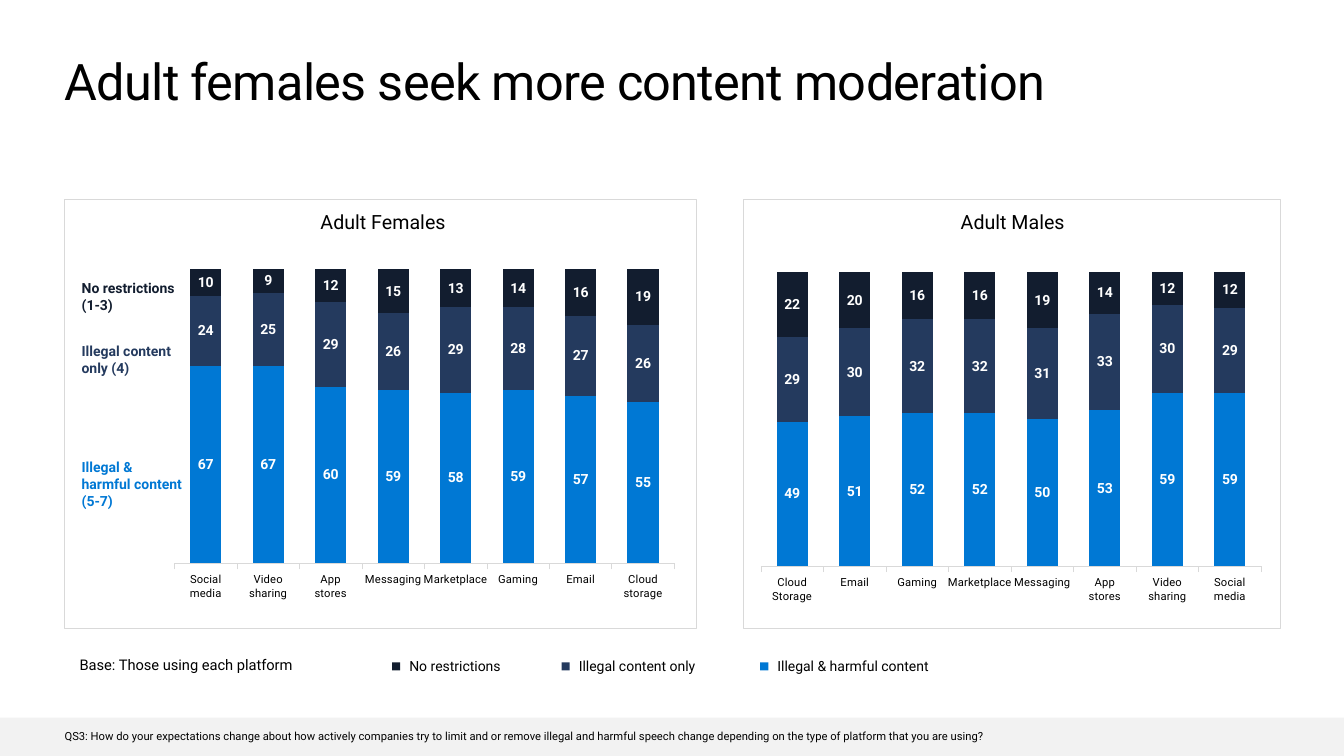
from dataclasses import dataclass

from lxml.etree import SubElement
from pptx import Presentation
from pptx.chart.data import CategoryChartData
from pptx.dml.color import RGBColor
from pptx.enum.chart import XL_CHART_TYPE, XL_TICK_LABEL_POSITION, XL_TICK_MARK
from pptx.enum.shapes import MSO_SHAPE
from pptx.enum.text import MSO_ANCHOR, PP_ALIGN
from pptx.oxml.ns import qn
from pptx.util import Inches, Pt

FONT = "Roboto"
BLACK, WHITE, BORDER, BAND = "000000", "FFFFFF", "D9D9D9", "F2F2F2"
BLUE, NAVY, DARK = "0078D4", "243A5E", "121D2F"


@dataclass(frozen=True)
class Box:
    left: float
    top: float
    width: float
    height: float

    def lengths(self) -> tuple:
        return tuple(Inches(v) for v in (self.left, self.top, self.width, self.height))


@dataclass(frozen=True)
class Label:
    text: str
    box: Box
    size: float
    color: str = BLACK
    bold: bool = False
    align: PP_ALIGN = PP_ALIGN.LEFT
    wrap: bool = True


@dataclass(frozen=True)
class Panel:
    heading: Label
    frame: Box
    chart: Box
    plot: Box  # fractions of the chart area
    categories: tuple
    harmful: tuple
    illegal: tuple
    unrestricted: tuple
    reverse: bool = False


@dataclass(frozen=True)
class LegendEntry:
    text: str
    color: str
    left: float
    width: float


PLATFORMS = ("Email", "Gaming", "Marketplace", "Messaging",
             "App\nstores", "Video\nsharing", "Social\nmedia")

PANELS = (
    Panel(
        Label("Adult Females", Box(2.62, 2.08, 2.36, 0.24), 14, align=PP_ALIGN.CENTER),
        Box(0.64, 1.98, 6.27, 4.26), Box(1.55, 2.03, 5.32, 4.14),
        Box(0.034, 0.155, 0.932, 0.705), ("Cloud\nstorage", *PLATFORMS),
        (55, 57, 59, 58, 59, 60, 67, 67),
        (26, 27, 28, 29, 26, 29, 25, 24),
        (19, 16, 14, 13, 15, 12, 9, 10), reverse=True),
    Panel(
        Label("Adult Males", Box(9.11, 2.08, 1.87, 0.24), 14, align=PP_ALIGN.CENTER),
        Box(7.37, 1.98, 5.33, 4.26), Box(7.35, 2.08, 5.34, 4.1),
        Box(0.037, 0.152, 0.929, 0.711), ("Cloud\nStorage", *PLATFORMS),
        (49, 51, 52, 52, 50, 53, 59, 59),
        (29, 30, 32, 32, 31, 33, 30, 29),
        (22, 20, 16, 16, 19, 14, 12, 12)),
)

LABELS = (
    Label("Illegal & harmful content (5-7)", Box(0.81, 4.55, 1.02, 0.5), 10, BLUE, True),
    Label("No restrictions\n(1-3)", Box(0.81, 2.77, 0.99, 0.34), 10, DARK, True),
    Label("Illegal content only (4)", Box(0.81, 3.4, 0.96, 0.34), 10, NAVY, True),
    Label("Base: Those using each platform", Box(0.79, 6.51, 2.69, 0.18), 10.5),
)

LEGEND = (
    LegendEntry("No restrictions", DARK, 3.89, 0.94),
    LegendEntry("Illegal content only", NAVY, 5.57, 1.18),
    LegendEntry("Illegal & harmful content", BLUE, 7.54, 1.59),
)

QUESTION = Label(
    "QS3: How do your expectations change about how actively companies try to limit "
    "and or remove illegal and harmful speech change depending on the type of platform "
    "that you are using?", Box(0.64, 7.24, 12.05, 0.13), 8)


def rgb(color: str) -> RGBColor:
    return RGBColor.from_string(color)


def style_font(font, size: float, color: str, bold: bool = False) -> None:
    font.name, font.size, font.bold = FONT, Pt(size), bold
    font.color.rgb = rgb(color)


def fill_text(shape, label: Label) -> None:
    frame = shape.text_frame
    frame.margin_left = frame.margin_right = frame.margin_top = frame.margin_bottom = 0
    frame.vertical_anchor = MSO_ANCHOR.TOP
    frame.word_wrap = label.wrap
    frame.text = label.text
    for paragraph in frame.paragraphs:
        paragraph.alignment = label.align
        for run in paragraph.runs:
            style_font(run.font, label.size, label.color, label.bold)


def add_label(slide, label: Label) -> None:
    fill_text(slide.shapes.add_textbox(*label.box.lengths()), label)


def add_rectangle(slide, box: Box, fill: str = "", line: str = "") -> None:
    shape = slide.shapes.add_shape(MSO_SHAPE.RECTANGLE, *box.lengths())
    shape.shadow.inherit = False
    if fill:
        shape.fill.solid()
        shape.fill.fore_color.rgb = rgb(fill)
    else:
        shape.fill.background()
    if line:
        shape.line.color.rgb = rgb(line)
        shape.line.width = Pt(0.75)
    else:
        shape.line.fill.background()


def place_plot(chart, plot: Box) -> None:
    area = chart.element.find(".//" + qn("c:plotArea"))
    for layout in area.findall(qn("c:layout")):
        area.remove(layout)
    layout = SubElement(area, qn("c:layout"))
    area.insert(0, layout)
    manual = SubElement(layout, qn("c:manualLayout"))
    settings = (("layoutTarget", "inner"), ("xMode", "edge"), ("yMode", "edge"),
                ("x", plot.left), ("y", plot.top), ("w", plot.width), ("h", plot.height))
    for name, value in settings:
        SubElement(manual, qn(f"c:{name}")).set("val", str(value))


def add_stacked_chart(slide, panel: Panel) -> None:
    data = CategoryChartData(number_format="0")
    data.categories = panel.categories
    data.add_series("Illegal & harmful content", panel.harmful)
    data.add_series("Illegal content only", panel.illegal)
    data.add_series("No restrictions", panel.unrestricted)
    chart = slide.shapes.add_chart(
        XL_CHART_TYPE.COLUMN_STACKED, *panel.chart.lengths(), data).chart
    chart.has_title = chart.has_legend = False
    style_font(chart.font, 10, WHITE)
    place_plot(chart, panel.plot)

    plot = chart.plots[0]
    plot.gap_width = plot.overlap = 100
    plot.vary_by_categories = False
    for series, color in zip(plot.series, (BLUE, NAVY, DARK)):
        series.format.fill.solid()
        series.format.fill.fore_color.rgb = rgb(color)
        labels = series.data_labels
        labels.show_value = True
        labels.number_format, labels.number_format_is_linked = "0", False
        style_font(labels.font, 10, WHITE, bold=True)

    category_axis, value_axis = chart.category_axis, chart.value_axis
    category_axis.major_tick_mark = XL_TICK_MARK.OUTSIDE
    category_axis.tick_label_position = XL_TICK_LABEL_POSITION.LOW
    category_axis.reverse_order = panel.reverse
    category_axis.format.line.color.rgb = rgb(BORDER)
    category_axis.format.line.width = Pt(0.5)
    style_font(category_axis.tick_labels.font, 8, BLACK)
    value_axis.minimum_scale, value_axis.maximum_scale = 0, 100
    value_axis.has_major_gridlines = False
    value_axis.visible = False


def main() -> None:
    presentation = Presentation()
    presentation.slide_width, presentation.slide_height = Inches(13.33), Inches(7.5)
    slide = presentation.slides.add_slide(presentation.slide_layouts[5])

    # Title
    title = slide.shapes.title
    title_label = Label("Adult females seek more content moderation",
                        Box(0.64, 0.5, 12.05, 0.61), 36)
    title.left, title.top, title.width, title.height = title_label.box.lengths()
    fill_text(title, title_label)
    title.text_frame.paragraphs[0].runs[0].font._element.set("spc", "-50")

    # Chart panels
    for panel in PANELS:
        add_rectangle(slide, panel.frame, line=BORDER)
        add_stacked_chart(slide, panel)
        add_label(slide, panel.heading)

    # Row labels and base
    for label in LABELS:
        add_label(slide, label)

    # Legend
    for entry in LEGEND:
        add_rectangle(slide, Box(entry.left, 6.57, 0.08, 0.08), fill=entry.color)
        text_box = Box(entry.left + 0.17, 6.52, entry.width, 0.17)
        add_label(slide, Label(entry.text, text_box, 10, wrap=False))

    # Footer
    add_rectangle(slide, Box(0, 7.12, 13.33, 0.38), fill=BAND)
    add_label(slide, QUESTION)

    presentation.save("out.pptx")


if __name__ == "__main__":
    main()
